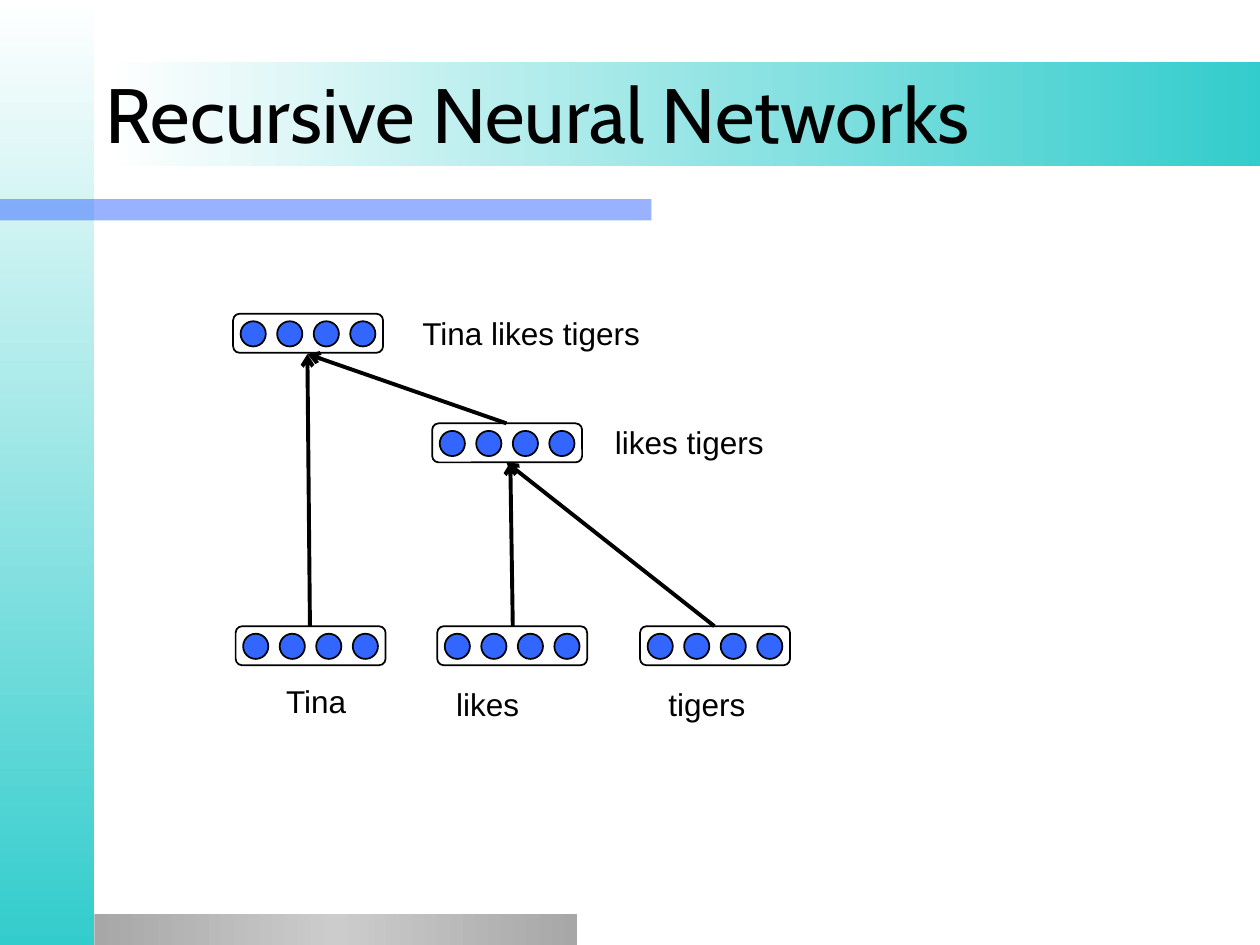
from typing import NamedTuple

from lxml.etree import SubElement
from pptx import Presentation
from pptx.dml.color import RGBColor
from pptx.enum.shapes import MSO_CONNECTOR as Connector, MSO_SHAPE as Shape
from pptx.enum.text import MSO_ANCHOR as Anchor, PP_ALIGN as Align
from pptx.oxml.ns import qn
from pptx.util import Inches, Pt

BLACK, WHITE, BLUE, TEAL = "000000", "FFFFFF", "3366FF", "33CCCC"
VECTOR_W, VECTOR_H = 1.19, 0.31
UNIT_SIZE, UNIT_STEP, UNIT_INSET = 0.2, 0.29, 0.06
UNITS = 4


class Vector(NamedTuple):
    left: float
    top: float


class Label(NamedTuple):
    text: str
    left: float
    top: float
    width: float


class Arrow(NamedTuple):
    start: tuple[float, float]
    end: tuple[float, float]


VECTORS = [
    Vector(1.87, 4.97), Vector(5.08, 4.97), Vector(3.47, 4.97),
    Vector(3.43, 3.36), Vector(1.85, 2.49),
]
LABELS = [
    Label("Tina", 2.14, 5.41, 0.74),
    Label("likes", 3.5, 5.44, 0.74),
    Label("tigers", 5.24, 5.44, 0.74),
    Label("likes tigers", 4.76, 3.36, 1.42),
    Label("Tina likes tigers", 3.19, 2.49, 2.05),
]
ARROWS = [
    Arrow((2.46, 4.97), (2.44, 2.81)),
    Arrow((4.07, 4.97), (4.05, 3.67)),
    Arrow((5.67, 4.97), (4.02, 3.67)),
    Arrow((4.02, 3.36), (2.44, 2.81)),
]


def rgb(value: str) -> RGBColor:
    return RGBColor.from_string(value)


def add_box(shapes, kind, left: float, top: float, width: float, height: float,
            fill: str = WHITE, line: str | None = None):
    box = shapes.add_shape(kind, Inches(left), Inches(top), Inches(width), Inches(height))
    box.shadow.inherit = False
    box.fill.solid()
    box.fill.fore_color.rgb = rgb(fill)
    if line:
        box.line.color.rgb = rgb(line)
        box.line.width = Pt(1)
    else:
        box.line.fill.background()
    return box


def set_gradient(box, colors: list[str], angle: int) -> None:
    """Spread the colours evenly; the angle runs counter-clockwise."""
    box.fill.gradient()
    box.fill.gradient_angle = angle
    stops = box.element.spPr.find(".//" + qn("a:gsLst"))
    for stop in list(stops):
        stops.remove(stop)
    for i, color in enumerate(colors):
        position = 100000 * i // (len(colors) - 1)
        stop = SubElement(stops, qn("a:gs"), pos=str(position))
        SubElement(stop, qn("a:srgbClr"), val=color)


def add_vector(shapes, vector: Vector) -> None:
    group = shapes.add_group_shape().shapes
    add_box(group, Shape.ROUNDED_RECTANGLE, *vector, VECTOR_W, VECTOR_H, line=BLACK)
    for i in range(UNITS):
        add_box(group, Shape.OVAL, vector.left + UNIT_INSET + i * UNIT_STEP,
                vector.top + UNIT_INSET, UNIT_SIZE, UNIT_SIZE, BLUE, BLACK)


def add_label(shapes, label: Label) -> None:
    frame = shapes.add_textbox(Inches(label.left), Inches(label.top),
                               Inches(label.width), Inches(0.3)).text_frame
    frame.word_wrap = True
    frame.margin_left = frame.margin_right = frame.margin_top = frame.margin_bottom = 0
    paragraph = frame.paragraphs[0]
    paragraph.text = label.text
    paragraph.alignment = Align.CENTER
    set_font(paragraph, "Arial", 18)


def set_font(paragraph, name: str, size: int) -> None:
    paragraph.font.name = name
    paragraph.font.size = Pt(size)
    paragraph.font.color.rgb = rgb(BLACK)


def add_arrow(shapes, arrow: Arrow) -> None:
    points = [Inches(value) for value in (*arrow.start, *arrow.end)]
    connector = shapes.add_connector(Connector.STRAIGHT, *points)
    connector.line.color.rgb = rgb(BLACK)
    connector.line.width = Pt(2.25)
    SubElement(connector.line._get_or_add_ln(), qn("a:tailEnd"), type="arrow")
    SubElement(connector.element.spPr, qn("a:effectLst"))


def main() -> None:
    deck = Presentation()
    deck.slide_width, deck.slide_height = Inches(10), Inches(7.5)
    slide = deck.slides.add_slide(deck.slide_layouts[5])
    shapes = slide.shapes

    # Background bands
    sidebar = add_box(shapes, Shape.RECTANGLE, 0, 0, 0.75, 7.5)
    set_gradient(sidebar, [WHITE, TEAL], 270)
    rule = add_box(shapes, Shape.RECTANGLE, 0, 1.58, 5.17, 0.17, BLUE)
    rule_color = rule.element.spPr.find(".//" + qn("a:srgbClr"))
    SubElement(rule_color, qn("a:alpha"), val="50000")
    footer = add_box(shapes, Shape.RECTANGLE, 0.75, 7.25, 3.83, 0.25)
    set_gradient(footer, ["A7A7A7", "CCCCCC", "A7A7A7"], 0)
    title_band = add_box(shapes, Shape.RECTANGLE, 0.84, 0.49, 9.16, 0.83)
    set_gradient(title_band, [WHITE, TEAL], 0)

    # Title, brought in front of its band
    title = shapes.title
    title.left, title.top = Inches(0.74), Inches(0.27)
    title.width, title.height = Inches(8.5), Inches(1.25)
    title.text_frame.text = "Recursive Neural Networks"
    title.text_frame.vertical_anchor = Anchor.MIDDLE
    heading = title.text_frame.paragraphs[0]
    heading.alignment = Align.LEFT
    set_font(heading, "Cabin", 44)
    title_band.element.addnext(title.element)

    # Tree of word and phrase vectors
    for vector in VECTORS:
        add_vector(shapes, vector)
    for label in LABELS:
        add_label(shapes, label)
    for arrow in ARROWS:
        add_arrow(shapes, arrow)

    deck.save("out.pptx")


if __name__ == "__main__":
    main()
